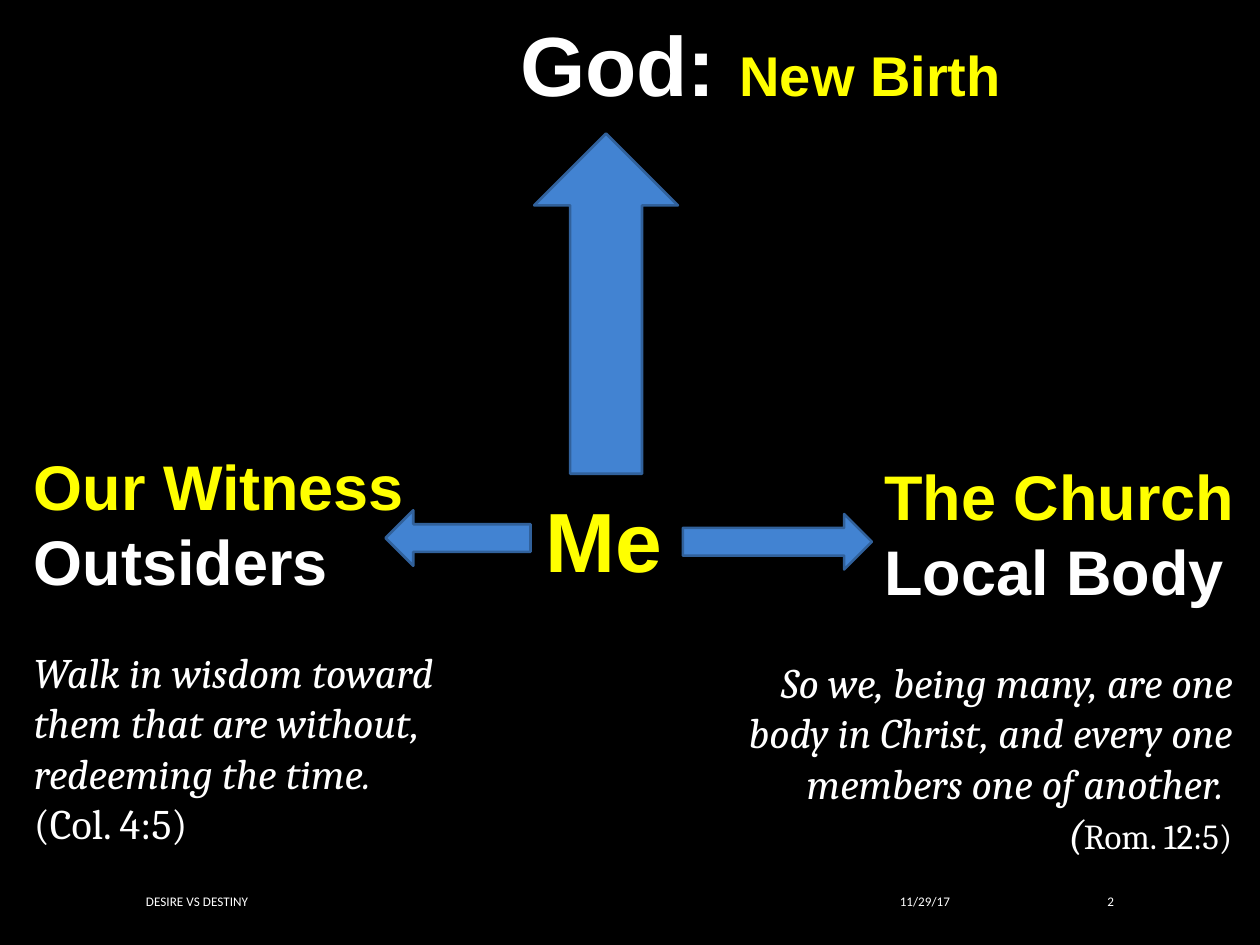
from typing import NamedTuple

import pptx
import pptx.dml.color
import pptx.enum.shapes
import pptx.enum.text
import pptx.util
from pptx.util import Inches

WHITE, GOLD, BLUE, NAVY, BLACK = "FFFFFF", "FFFF00", "4283D2", "31619B", "000000"
ALIGN = pptx.enum.text.PP_ALIGN
ANCHOR = pptx.enum.text.MSO_ANCHOR
FIT = pptx.enum.text.MSO_AUTO_SIZE


class Box(NamedTuple):
    left: float
    top: float
    width: float
    height: float


class Run(NamedTuple):
    text: str
    size: float
    color: str = WHITE
    italic: bool = False


class Arrow(NamedTuple):
    box: Box
    turn: int = 0


def tint(code: str) -> pptx.dml.color.RGBColor:
    return pptx.dml.color.RGBColor.from_string(code)


def add_text(slide, box: Box, *lines: list[Run], font: str = "Arial",
             bold: bool = False, align=ALIGN.LEFT, anchor=ANCHOR.TOP,
             wrap: bool = False, fit=FIT.SHAPE_TO_FIT_TEXT) -> None:
    """Add a text box with one paragraph for each list of runs."""
    frame = slide.shapes.add_textbox(*map(Inches, box)).text_frame
    frame.word_wrap = wrap
    frame.auto_size = fit
    frame.vertical_anchor = anchor
    for i, line in enumerate(lines):
        para = frame.add_paragraph() if i else frame.paragraphs[0]
        para.alignment = align
        for part in line:
            for j, text in enumerate(part.text.split("\n")):
                if j:
                    para.add_line_break()
                run = para.add_run()
                run.text = text
                run.font.name = font
                run.font.size = pptx.util.Pt(part.size)
                run.font.bold = bold
                run.font.italic = part.italic
                run.font.color.rgb = tint(part.color)


def add_arrow(slide, arrow: Arrow) -> None:
    kind = pptx.enum.shapes.MSO_SHAPE.RIGHT_ARROW
    shape = slide.shapes.add_shape(kind, *map(Inches, arrow.box))
    shape.rotation = arrow.turn
    shape.shadow.inherit = False
    shape.fill.solid()
    shape.fill.fore_color.rgb = tint(BLUE)
    shape.line.color.rgb = tint(NAVY)
    shape.line.width = pptx.util.Pt(1.5)


ARROWS = [
    Arrow(Box(3.46, 1.84, 2.7, 1.14), 270),
    Arrow(Box(3.06, 4.05, 1.15, 0.44), 180),
    Arrow(Box(5.42, 4.08, 1.5, 0.44)),
]
FOOTER = [
    (Box(6.56, 7, 1.08, 0.3), "11/29/17", ALIGN.RIGHT),
    (Box(1.06, 7, 5.19, 0.3), "DESIRE VS DESTINY", ALIGN.LEFT),
    (Box(7.94, 7, 1, 0.3), "2", ALIGN.RIGHT),
]
HEADS = [
    (Box(4.03, 0.05, 4.05, 0.91),
     [[Run("God: ", 48), Run("New Birth", 32, GOLD)]]),
    (Box(4.23, 3.83, 1.14, 0.91), [[Run("Me", 48, GOLD)]]),
    (Box(0.17, 3.5, 3.17, 1.31),
     [[Run("Our Witness", 36, GOLD)], [Run("Outsiders", 36)]]),
    (Box(6.92, 3.58, 3.01, 1.31),
     [[Run("The Church", 36, GOLD)], [Run("Local Body", 36)]]),
]
VERSES = [
    (Box(0.17, 5.08, 4.04, 1.72), ALIGN.LEFT,
     [[Run("Walk in wisdom toward them that are without, "
           "redeeming the time.", 24, italic=True)],
      [Run("(Col. 4:5)", 24)]]),
    (Box(5.75, 5.16, 4.13, 1.72), ALIGN.RIGHT,
     [[Run("So we, being many, are one body in Christ, and every one "
           "members one of another. \n(", 24, italic=True),
       Run("Rom. 12:5)", 20)]]),
]


def main() -> None:
    deck = pptx.Presentation()
    deck.slide_width, deck.slide_height = Inches(10), Inches(7.5)
    slide = deck.slides.add_slide(deck.slide_layouts[6])
    slide.background.fill.solid()
    slide.background.fill.fore_color.rgb = tint(BLACK)
    for box, text, align in FOOTER:
        add_text(slide, box, [Run(text, 7.5)], font="Calibri", align=align,
                 anchor=ANCHOR.MIDDLE, wrap=True, fit=FIT.NONE)
    for box, lines in HEADS:
        add_text(slide, box, *lines, bold=True)
    for box, align, lines in VERSES:
        add_text(slide, box, *lines, font="Cambria", align=align, wrap=True)
    for arrow in ARROWS:
        add_arrow(slide, arrow)
    deck.save("out.pptx")


if __name__ == "__main__":
    main()
